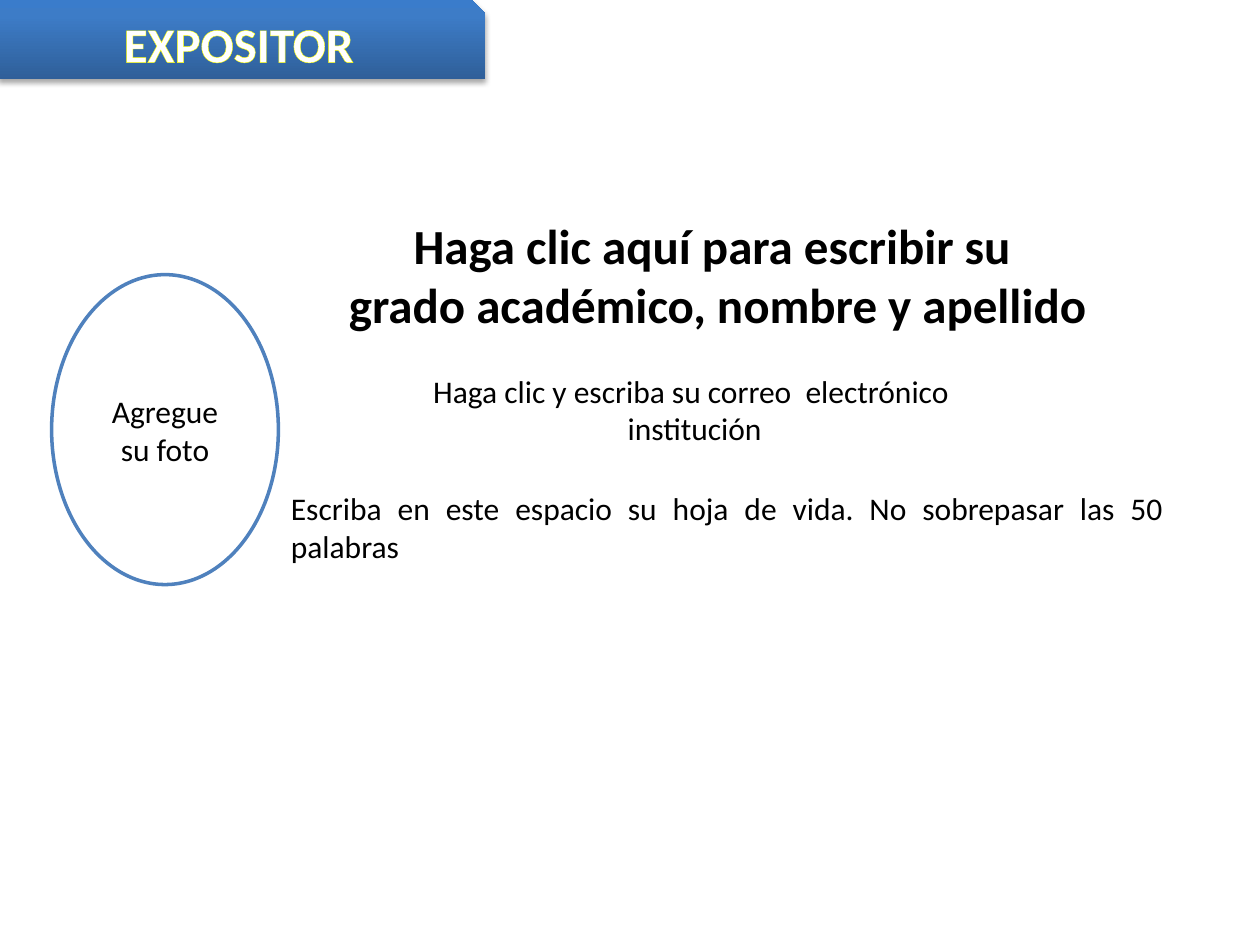
"""Build the speaker introduction slide."""
import lxml.etree
import pptx
import pptx.dml.color
import pptx.enum.shapes
import pptx.enum.text
import pptx.oxml
import pptx.oxml.ns
import pptx.util

Inches = pptx.util.Inches
RGBColor = pptx.dml.color.RGBColor
SHAPE = pptx.enum.shapes.MSO_SHAPE
ALIGN = pptx.enum.text.PP_ALIGN
ANCHOR = pptx.enum.text.MSO_ANCHOR

BLACK = RGBColor(0x00, 0x00, 0x00)
WHITE = RGBColor(0xFF, 0xFF, 0xFF)
YELLOW = RGBColor(0xFF, 0xFF, 0x00)
BLUE = RGBColor(0x4F, 0x81, 0xBD)
BANNER_STOPS = (
    (0, RGBColor(0x2F, 0x5F, 0x99)),
    (80, RGBColor(0x3D, 0x7C, 0xC7)),
    (100, RGBColor(0x3A, 0x7C, 0xCB)),
)


def drawing_xml(markup):
    """Parse a DrawingML element whose root tag carries no namespace yet."""
    namespace = pptx.oxml.ns.nsdecls("a")
    return pptx.oxml.parse_xml(markup.replace(">", f" {namespace}>", 1))


def outline_text(span, color, width):
    """Give the letters of a run a coloured outline."""
    outline = drawing_xml(
        f'<a:ln w="{pptx.util.Pt(width)}"><a:solidFill><a:srgbClr val="{color}"/>'
        "</a:solidFill></a:ln>"
    )
    span.font._element.insert(0, outline)


def write_text(box, lines, size=18, color=BLACK, bold=False, align=ALIGN.CENTER,
               anchor=ANCHOR.TOP, outline=None):
    """Write one paragraph per line with a common format."""
    frame = box.text_frame
    frame.word_wrap = True
    frame.vertical_anchor = anchor
    for index, line in enumerate(lines):
        para = frame.add_paragraph() if index else frame.paragraphs[0]
        para.alignment = align
        span = para.add_run()
        span.text = line
        span.font.name = "Calibri"
        span.font.size = pptx.util.Pt(size)
        span.font.bold = bold
        span.font.color.rgb = color
        if outline:
            outline_text(span, *outline)


def add_text(page, left, top, width, height, lines, **style):
    """Add a text box that grows with its text."""
    box = page.shapes.add_textbox(
        Inches(left), Inches(top), Inches(width), Inches(height))
    write_text(box, lines, **style)
    box.text_frame.auto_size = pptx.enum.text.MSO_AUTO_SIZE.SHAPE_TO_FIT_TEXT


def add_photo_oval(page):
    """Add the outlined oval that holds the place of the photo."""
    oval = page.shapes.add_shape(
        SHAPE.OVAL, Inches(0.41), Inches(2.18), Inches(1.8), Inches(2.46))
    oval.shadow.inherit = False
    oval.fill.solid()
    oval.fill.fore_color.rgb = WHITE
    oval.line.color.rgb = BLUE
    oval.line.width = pptx.util.Pt(2)
    write_text(oval, ["Agregue su foto"], anchor=ANCHOR.MIDDLE)


def add_banner(page):
    """Add the heading banner with its gradient and soft shadow."""
    banner = page.shapes.add_shape(
        SHAPE.SNIP_1_RECTANGLE, Inches(-0.01), 0, Inches(3.86), Inches(0.63))
    banner.line.fill.background()
    banner.shadow.inherit = False
    stops = "".join(
        f'<a:gs pos="{position * 1000}"><a:srgbClr val="{color}"/></a:gs>'
        for position, color in BANNER_STOPS
    )
    properties = banner._element.spPr
    geometry = properties.find(pptx.oxml.ns.qn("a:prstGeom"))
    geometry.addnext(drawing_xml(
        f'<a:gradFill rotWithShape="1"><a:gsLst>{stops}</a:gsLst>'
        f'<a:lin ang="{270 * 60000}" scaled="0"/></a:gradFill>'
    ))
    effects = properties.find(pptx.oxml.ns.qn("a:effectLst"))
    effects.append(drawing_xml(
        f'<a:outerShdw blurRad="{pptx.util.Pt(3.1)}" dist="{pptx.util.Pt(1.8)}" '
        f'dir="{90 * 60000}" rotWithShape="0"><a:srgbClr val="{BLACK}">'
        '<a:alpha val="35000"/></a:srgbClr></a:outerShdw>'
    ))
    write_text(banner, ["EXPOSITOR"], size=28, color=WHITE, bold=True,
               anchor=ANCHOR.MIDDLE, outline=(YELLOW, 0.9))


def main():
    """Build and save the deck."""
    deck = pptx.Presentation()
    deck.slide_width = Inches(10)
    deck.slide_height = Inches(7.5)
    page = deck.slides.add_slide(deck.slide_layouts[6])
    add_photo_oval(page)
    add_text(page, 2.21, 3.83, 7.12, 0.71,
             ["Escriba en este espacio su hoja de vida. No sobrepasar las 50 palabras"],
             align=ALIGN.JUSTIFY)
    add_text(page, 2.21, 1.66, 6.97, 1.04,
             ["Haga clic aquí para escribir su ", "grado académico, nombre y apellido"],
             size=28, bold=True)
    add_text(page, 2.51, 2.9, 5.95, 0.71,
             ["Haga clic y escriba su correo  electrónico", " institución"],
             outline=(BLACK, 0.75))
    add_banner(page)
    deck.save("out.pptx")


if __name__ == "__main__":
    main()
